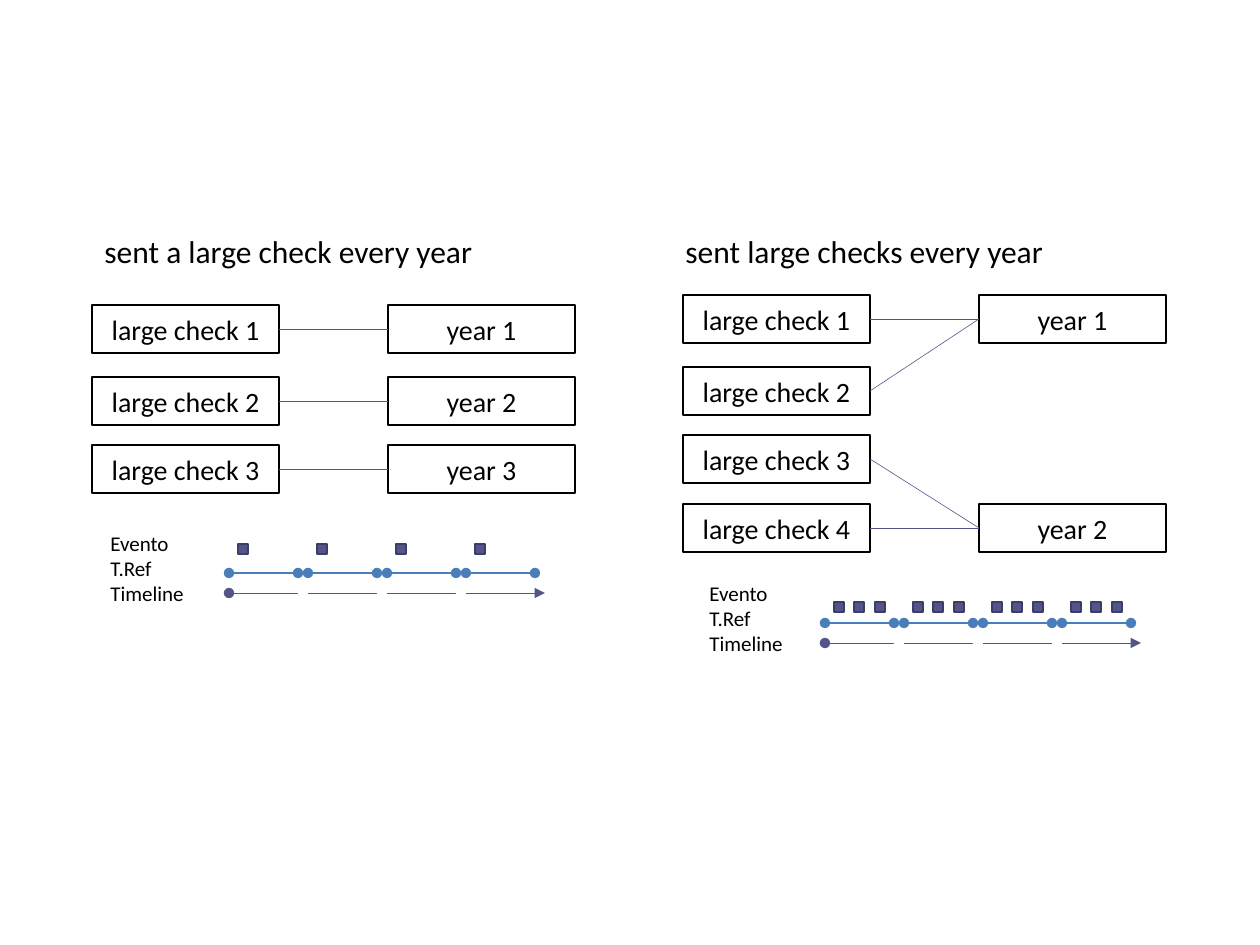
from lxml.etree import SubElement
from pptx import Presentation
from pptx.dml.color import RGBColor
from pptx.enum.shapes import MSO_CONNECTOR as Link, MSO_SHAPE as Preset
from pptx.enum.text import MSO_ANCHOR as Anchor, MSO_AUTO_SIZE as Fit, PP_ALIGN as Align
from pptx.oxml.ns import qn
from pptx.util import Emu, Pt

PX_PER_INCH = 126
BLACK, WHITE = "000000", "FFFFFF"
VIOLET, DARK_VIOLET, BLUE = "53548A", "3D3E66", "4A7EBB"
ROW_TOPS = (0, 72, 140, 209)
BOX_WIDTH, BOX_HEIGHT, YEAR_OFFSET = 187, 48, 296
PERIODS, PITCH, GAP = 4, 79, 10


def px(length):
    """Turn pixels into EMU."""
    return Emu(round(length * 914400 / PX_PER_INCH))


def color(code):
    """Turn a hex string into a colour."""
    return RGBColor.from_string(code)


def write(shape, lines, size, align=Align.LEFT):
    """Fill a shape with one paragraph per line."""
    frame = shape.text_frame
    frame.word_wrap = True
    frame.auto_size = Fit.SHAPE_TO_FIT_TEXT
    frame.text = "\n".join(lines)
    for para in frame.paragraphs:
        para.alignment = align
        para.font.name = "Calibri"
        para.font.size = Pt(size)
        para.font.color.rgb = color(BLACK)


def add_label(page, left, top, width, height, lines, size):
    """Add a plain text box."""
    write(page.shapes.add_textbox(px(left), px(top), px(width), px(height)), lines, size)


def add_rect(page, left, top, width, height, fill=None, line=None, weight=1):
    """Add a rectangle with an optional fill and outline."""
    rect = page.shapes.add_shape(Preset.RECTANGLE, px(left), px(top), px(width), px(height))
    rect.shadow.inherit = False
    if fill:
        rect.fill.solid()
        rect.fill.fore_color.rgb = color(fill)
    else:
        rect.fill.background()
    if line:
        rect.line.color.rgb = color(line)
        rect.line.width = Pt(weight)
    else:
        rect.line.fill.background()
    return rect


def add_line(page, start, end, code, weight, head=None, tail=None):
    """Add a straight line with optional end markers."""
    line = page.shapes.add_connector(Link.STRAIGHT, *map(px, start + end))
    line.line.color.rgb = color(code)
    line.line.width = Pt(weight)
    for tag, kind in (("a:headEnd", head), ("a:tailEnd", tail)):
        if kind:
            SubElement(line.get_or_add_ln(), qn(tag)).set("type", kind)
    SubElement(line.element.spPr, qn("a:effectLst"))
    return line


def add_column(page, left, top, name, rows):
    """Stack numbered boxes on the given rows."""
    boxes = []
    for number, row in enumerate(rows, 1):
        box = add_rect(page, left, top + ROW_TOPS[row], BOX_WIDTH, BOX_HEIGHT, line=BLACK)
        write(box, [f"{name} {number}"], 16, Align.CENTER)
        box.text_frame.vertical_anchor = Anchor.MIDDLE
        boxes.append(box)
    return boxes


def add_mapping(page, left, top, check_rows, year_rows, owners):
    """Join each check box to the year that owns it."""
    checks = add_column(page, left, top, "large check", check_rows)
    years = add_column(page, left + YEAR_OFFSET, top, "year", year_rows)
    for check, owner in zip(checks, owners):
        link = add_line(page, (0, 0), (0, 0), VIOLET, 0.35)
        link.begin_connect(check, 3)
        link.end_connect(years[owner], 1)


def add_timeline(page, left, top, label_left, event_rise, event_offsets):
    """Draw events, reference periods and a broken time axis."""
    add_label(page, label_left, top - 49, 110, 88, ["Evento", "T.Ref", "Timeline"], 12)
    axis = top + 20
    add_line(page, (left, axis), (left + PERIODS * PITCH, axis), VIOLET, 0.35, "oval", "triangle")
    for period in range(PERIODS):
        start = left + period * PITCH
        end = start + PITCH - GAP
        add_line(page, (start, top), (end, top), BLUE, 0.75, "oval", "oval")
        if period < PERIODS - 1:
            add_rect(page, end, axis - 10, GAP, 20, fill=WHITE)
        for offset in event_offsets:
            add_rect(page, start + offset, top - event_rise, 10, 10, VIOLET, DARK_VIOLET, 1.5)


def add_single_panel(page, left, top):
    """Show one check for each year."""
    add_label(page, left, top, 493, 50, ["sent a large check every year"], 18)
    add_mapping(page, left, top + 79, range(3), range(3), range(3))
    add_timeline(page, left + 137, top + 347, left + 6, 29, (9,))


def add_multiple_panel(page, left, top):
    """Show several checks for each year."""
    add_label(page, left - 10, top, 493, 50, ["sent large checks every year"], 18)
    add_mapping(page, left, top + 69, range(4), (0, 3), (0, 0, 1, 1))
    add_timeline(page, left + 142, top + 397, left + 14, 21, (9, 29, 50))


def main():
    """Build and save the slide."""
    deck = Presentation()
    deck.slide_width, deck.slide_height = px(1260), px(945)
    page = deck.slides.add_slide(deck.slide_layouts[6])
    add_single_panel(page, 92, 226)
    add_multiple_panel(page, 683, 226)
    deck.save("out.pptx")


if __name__ == "__main__":
    main()
